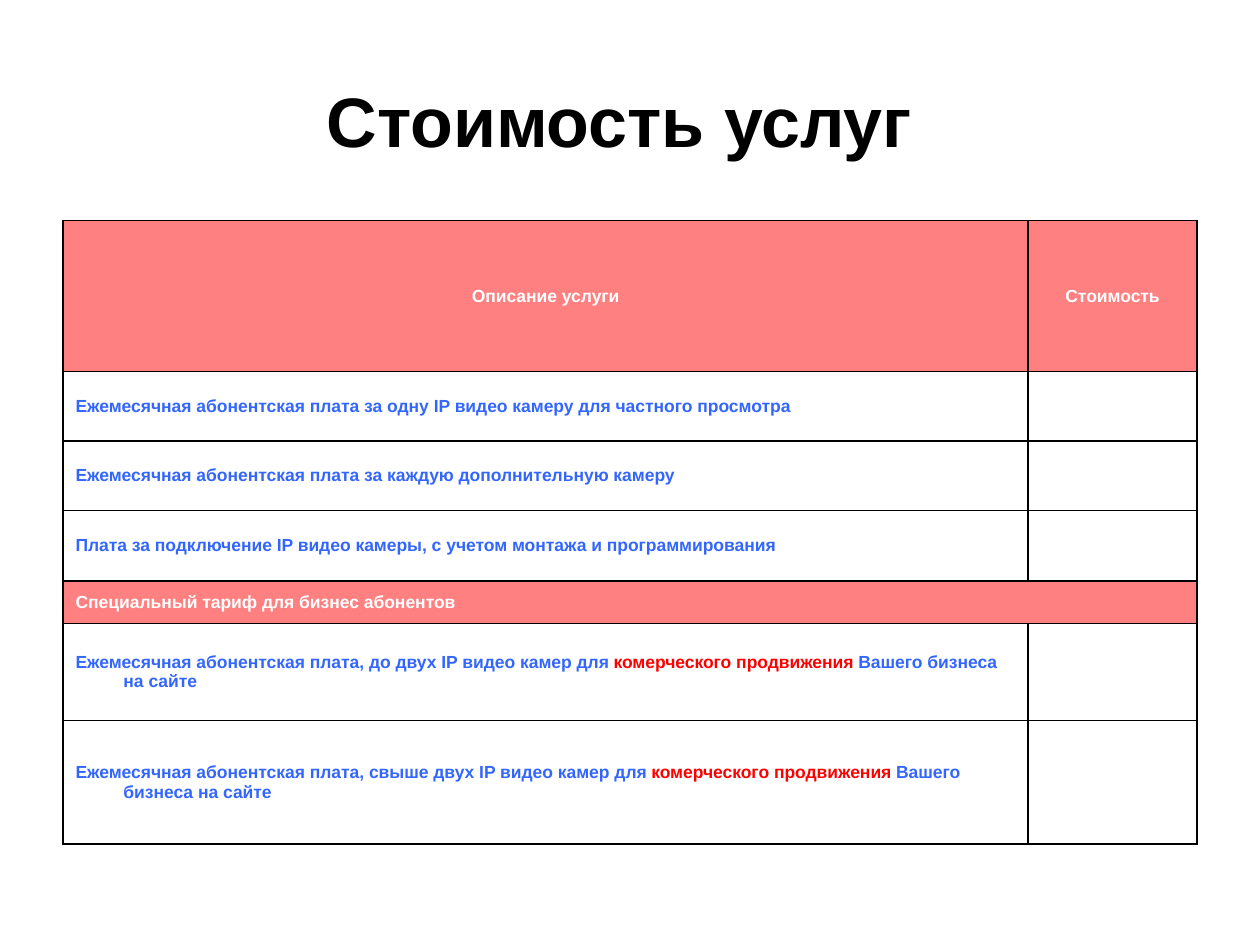
"""Build a price-list slide with a title and a bordered tariff table."""
from dataclasses import dataclass

import lxml.etree
import pptx
import pptx.dml.color
import pptx.enum.text
import pptx.oxml.ns
import pptx.util

RGBColor = pptx.dml.color.RGBColor
BLACK = RGBColor(0x00, 0x00, 0x00)
WHITE = RGBColor(0xFF, 0xFF, 0xFF)
CORAL = RGBColor(0xFF, 0x80, 0x80)
BLUE = RGBColor(0x33, 0x66, 0xFF)
RED = RGBColor(0xFF, 0x00, 0x00)

FONT = "Arial"
WIDTH, HEIGHT = pptx.util.Inches(10), pptx.util.Inches(7.5)
MARGIN, CONTENT = 0.05, 0.9
COLUMNS = (7.66, 1.34)
INDENT = pptx.util.Inches(0.38)
BORDER = pptx.util.Pt(1)
PROMOTION = "комерческого продвижения "
ON_SITE = "Вашего бизнеса на сайте"


@dataclass(frozen=True)
class Piece:
    text: str
    color: RGBColor = BLUE


@dataclass(frozen=True)
class Row:
    height: float
    cells: tuple[tuple[Piece, ...], ...]
    fill: RGBColor = WHITE
    centered: bool = False
    merged: bool = False


def service(height: float, *pieces: Piece) -> Row:
    return Row(height, (pieces, ()))


ROWS = (
    Row(1.2, ((Piece("Описание услуги", WHITE),), (Piece("Стоимость", WHITE),)),
        CORAL, centered=True),
    service(0.55, Piece("Ежемесячная абонентская плата за одну IP видео камеру для частного просмотра")),
    service(0.55, Piece("Ежемесячная абонентская плата за каждую дополнительную камеру")),
    service(0.56, Piece("Плата за подключение IP видео камеры, с учетом монтажа и программирования")),
    Row(0.34, ((Piece("Специальный тариф для бизнес абонентов", WHITE),), ()),
        CORAL, merged=True),
    service(0.77, Piece("Ежемесячная абонентская плата, до двух IP видео камер для "),
            Piece(PROMOTION, RED), Piece(ON_SITE)),
    service(0.98, Piece("Ежемесячная абонентская плата, свыше двух IP видео камер для "),
            Piece(PROMOTION, RED), Piece(ON_SITE)),
)


def add_run(p, text: str, size: float, color: RGBColor, bold: bool = True) -> None:
    r = p.add_run()
    r.text = text
    r.font.name, r.font.size, r.font.bold = FONT, pptx.util.Pt(size), bold
    r.font.color.rgb = color


def add_borders(cell) -> None:
    tc_pr = cell._tc.get_or_add_tcPr()
    qn = pptx.oxml.ns.qn
    for side in ("a:lnL", "a:lnR", "a:lnT", "a:lnB"):
        line = lxml.etree.SubElement(tc_pr, qn(side), w=str(BORDER))
        fill = lxml.etree.SubElement(line, qn("a:solidFill"))
        lxml.etree.SubElement(fill, qn("a:srgbClr"), val=str(BLACK))


def fill_cell(cell, pieces: tuple[Piece, ...], row: Row) -> None:
    add_borders(cell)
    cell.fill.solid()
    cell.fill.fore_color.rgb = row.fill
    cell.vertical_anchor = pptx.enum.text.MSO_ANCHOR.MIDDLE
    p = cell.text_frame.paragraphs[0]
    align = pptx.enum.text.PP_ALIGN
    p.alignment = align.CENTER if row.centered else align.LEFT
    p.font.size = pptx.util.Pt(10)
    p_pr = p._p.get_or_add_pPr()
    p_pr.set("marL", str(INDENT))
    p_pr.set("indent", str(-INDENT))
    for piece in pieces:
        add_run(p, piece.text, 10, piece.color)


def add_title(s) -> None:
    sp = s.shapes.title
    sp.left, sp.top = int(WIDTH * MARGIN), int(HEIGHT * 0.04)
    sp.width, sp.height = int(WIDTH * CONTENT), pptx.util.Inches(1.25)
    tf = sp.text_frame
    tf.vertical_anchor = pptx.enum.text.MSO_ANCHOR.MIDDLE
    p = tf.paragraphs[0]
    p.alignment = pptx.enum.text.PP_ALIGN.CENTER
    add_run(p, "Стоимость услуг", 40, BLACK)
    add_run(p, " ", 44, BLACK, bold=False)


def add_price_table(s) -> None:
    total = pptx.util.Inches(sum(row.height for row in ROWS))
    table = s.shapes.add_table(
        len(ROWS), len(COLUMNS), int(WIDTH * MARGIN), pptx.util.Inches(1.75),
        int(WIDTH * CONTENT), total).table
    table.first_row = table.horz_banding = False
    for column, width in zip(table.columns, COLUMNS):
        column.width = pptx.util.Inches(width)
    for i, row in enumerate(ROWS):
        table.rows[i].height = pptx.util.Inches(row.height)
        for j, pieces in enumerate(row.cells):
            fill_cell(table.cell(i, j), pieces, row)
        if row.merged:
            table.cell(i, 0).merge(table.cell(i, len(COLUMNS) - 1))


def main() -> None:
    prs = pptx.Presentation()
    prs.slide_width, prs.slide_height = WIDTH, HEIGHT
    s = prs.slides.add_slide(prs.slide_layouts[5])
    add_title(s)
    add_price_table(s)
    prs.save("out.pptx")


if __name__ == "__main__":
    main()
